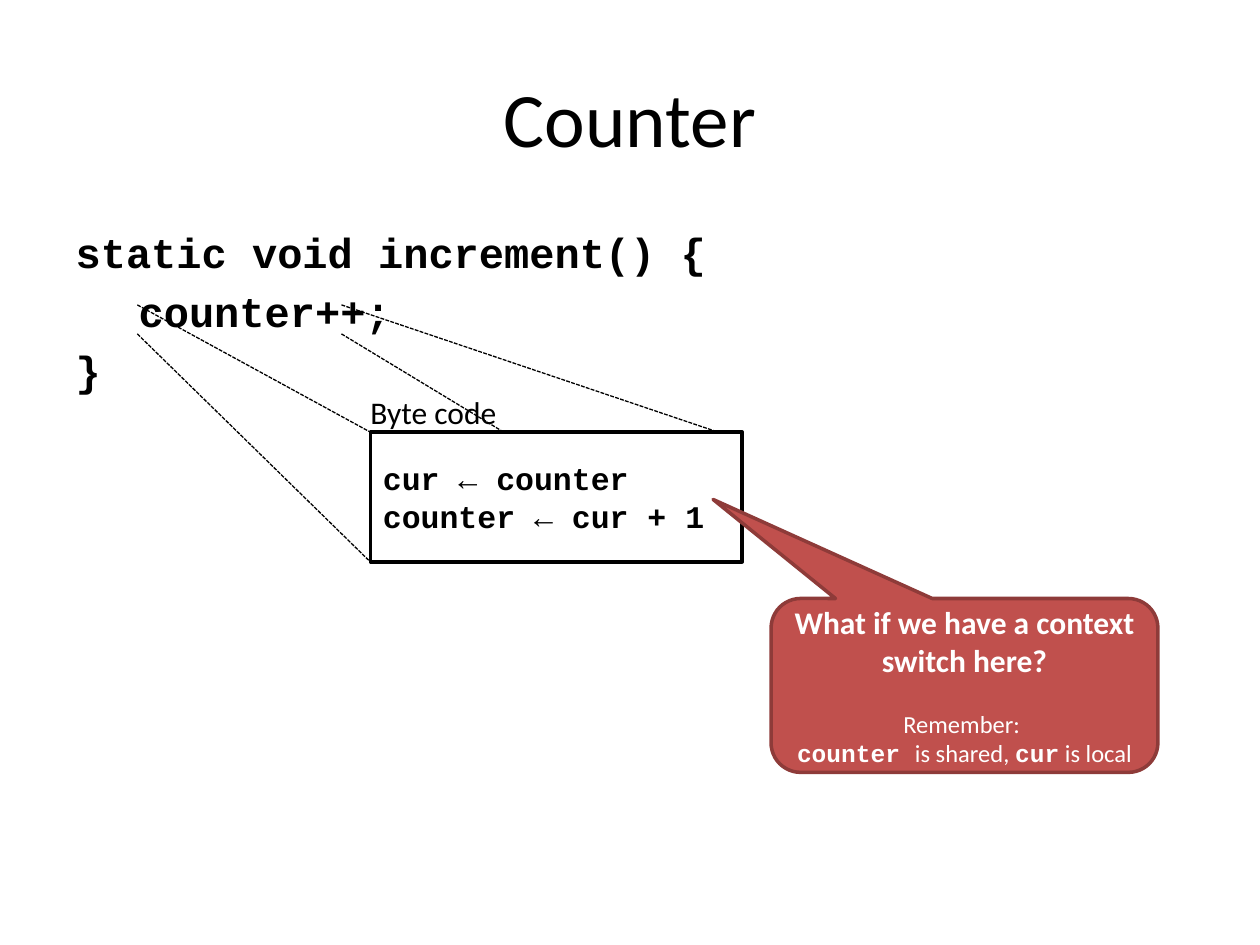
import pptx
import pptx.dml.color
import pptx.enum.dml
import pptx.enum.shapes
import pptx.enum.text
import pptx.oxml.ns
import pptx.util
import lxml.etree

Inches = pptx.util.Inches
Pt = pptx.util.Pt
MSO_SHAPE = pptx.enum.shapes.MSO_SHAPE
ALIGN = pptx.enum.text.PP_ALIGN
MIDDLE = pptx.enum.text.MSO_ANCHOR.MIDDLE
qn = pptx.oxml.ns.qn
COLORS = {"black": "000000", "white": "FFFFFF", "red": "C0504D", "dark_red": "8E3B39"}
BODY, CODE = "Calibri", "Courier New"


def rgb(name):
    return pptx.dml.color.RGBColor.from_string(COLORS[name])


def add_run(p, text, size, font=BODY, bold=False, color="black"):
    r = p.add_run()
    r.text = text
    r.font.size = Pt(size)
    r.font.name = font
    r.font.bold = bold
    r.font.color.rgb = rgb(color)


prs = pptx.Presentation()
prs.slide_width = Inches(10)
prs.slide_height = Inches(7.5)
s = prs.slides.add_slide(prs.slide_layouts[1])

title, body = s.placeholders
title.left, title.top, title.width, title.height = map(Inches, (0.5, 0.3, 9, 1.25))
body.left, body.top, body.width, body.height = map(Inches, (0.5, 1.75, 9, 4.95))

tf = title.text_frame
tf.vertical_anchor = MIDDLE
p = tf.paragraphs[0]
p.alignment = ALIGN.CENTER
add_run(p, "Counter", 44)

tf = body.text_frame
code_lines = [("static void increment() {", 0), ("counter++;", 0.5), ("}", 0)]
for i, (text, indent) in enumerate(code_lines):
    p = tf.add_paragraph() if i else tf.paragraphs[0]
    pPr = p._p.get_or_add_pPr()
    pPr.set("marL", str(Inches(indent)))
    pPr.set("indent", "0")
    lxml.etree.SubElement(pPr, qn("a:buNone"))
    add_run(p, text, 24, CODE, True)

zoom_lines = [
    (2.71, 2.65, 5.7, 4.46),
    (1.09, 2.65, 2.94, 4.46),
    (2.71, 2.42, 5.7, 3.43),
    (1.09, 2.42, 2.94, 3.43),
]
for ends in zoom_lines:
    line = s.shapes.add_connector(
        pptx.enum.shapes.MSO_CONNECTOR.STRAIGHT, *map(Inches, ends))
    line.line.color.rgb = rgb("black")
    line.line.width = Pt(0.75)
    line.line.dash_style = pptx.enum.dml.MSO_LINE.SQUARE_DOT
    lxml.etree.SubElement(line._element.spPr, qn("a:effectLst"))

boxes = [
    (MSO_SHAPE.RECTANGLE, (2.94, 3.43, 2.95, 1.03), "white", "black"),
    (MSO_SHAPE.ROUNDED_RECTANGULAR_CALLOUT, (6.12, 4.75, 3.07, 1.38), "red", "dark_red"),
]
frames = []
for kind, place, fill, outline in boxes:
    sp = s.shapes.add_shape(kind, *map(Inches, place))
    sp.shadow.inherit = False
    sp.fill.solid()
    sp.fill.fore_color.rgb = rgb(fill)
    sp.line.color.rgb = rgb(outline)
    sp.line.width = Pt(2)
    sp.text_frame.word_wrap = True
    sp.text_frame.vertical_anchor = MIDDLE
    frames.append(sp.text_frame)
for i, value in enumerate((-0.65, -1.07, 0.17)):
    sp.adjustments[i] = value
byte_code, question = frames

for i, text in enumerate(["cur ← counter", "counter ← cur + 1"]):
    p = byte_code.add_paragraph() if i else byte_code.paragraphs[0]
    p.alignment = ALIGN.LEFT
    add_run(p, text, 18, CODE, True)

question_lines = [
    (0, [("What if we have a context switch here?", 18, BODY, True)]),
    (17, [("Remember: ", 14, BODY, False)]),
    (0, [("counter ", 14, CODE, True), ("is shared, ", 14, BODY, False),
         ("cur", 14, CODE, True), (" is local", 14, BODY, False)]),
]
for i, (space, runs) in enumerate(question_lines):
    p = question.add_paragraph() if i else question.paragraphs[0]
    p.alignment = ALIGN.CENTER
    p.space_before = Pt(space)
    for run in runs:
        add_run(p, *run, color="white")

label = s.shapes.add_textbox(*map(Inches, (2.84, 3.07, 1.22, 0.4)))
label.text_frame.word_wrap = False
label.text_frame.auto_size = pptx.enum.text.MSO_AUTO_SIZE.SHAPE_TO_FIT_TEXT
add_run(label.text_frame.paragraphs[0], "Byte code", 18)

prs.save("out.pptx")
